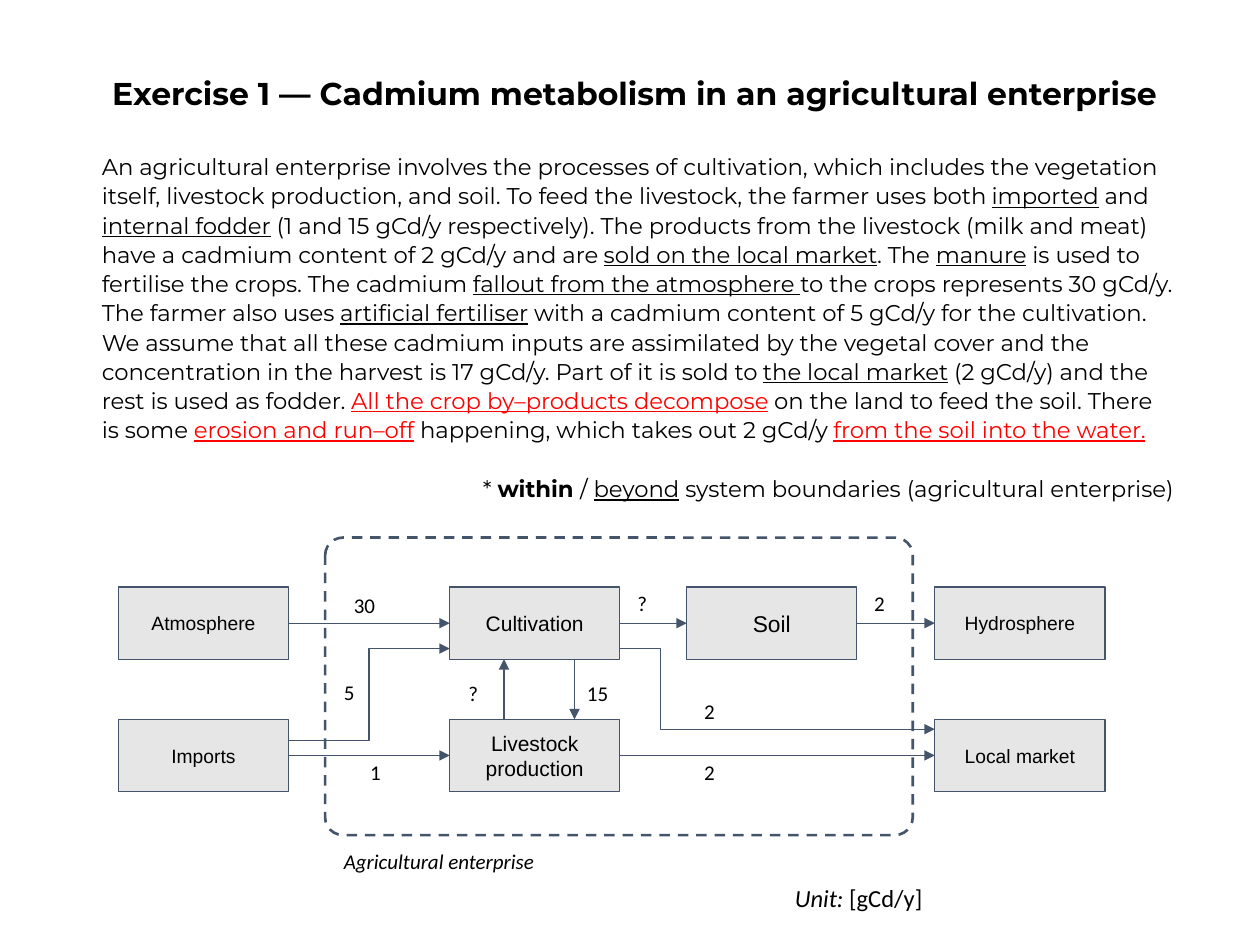
import lxml.etree
import pptx
import pptx.dml.color
import pptx.enum.dml
import pptx.enum.shapes
import pptx.enum.text
import pptx.oxml.ns
import pptx.util

Pt = pptx.util.Pt
qn = pptx.oxml.ns.qn
RGB = pptx.dml.color.RGBColor.from_string
SHAPES = pptx.enum.shapes.MSO_SHAPE
CONNECTORS = pptx.enum.shapes.MSO_CONNECTOR
ANCHORS = pptx.enum.text.MSO_ANCHOR
ALIGNS = pptx.enum.text.PP_ALIGN

THEME = {
    "ink": "000000", "highlight": "FF0000", "flow": "44546A", "process": "E7E6E6",
    "prose_font": "Montserrat", "process_font": "Arial", "label_font": "Calibri",
    "title": 18, "prose": 13, "label": 12, "unit": 14, "line": 0.75, "boundary": 1.5,
}
STYLES = {
    "plain": {},
    "beyond": {"underline": True},
    "alert": {"underline": True},
    "within": {"bold": True},
    "aside": {"italic": True},
}

TITLE = "Exercise 1 — Cadmium metabolism in an agricultural enterprise"
EXERCISE = [
    ("An agricultural enterprise involves the processes of cultivation, which includes the "
     "vegetation itself, livestock production, and soil. To feed the livestock, the farmer "
     "uses both ", "plain"),
    ("imported", "beyond"),
    (" and ", "plain"),
    ("internal fodder", "beyond"),
    (" (1 and 15 gCd/y respectively). The products from the livestock (milk and meat) have a "
     "cadmium content of 2 gCd/y and are ", "plain"),
    ("sold on the local market", "beyond"),
    (". The ", "plain"),
    ("manure", "beyond"),
    (" is used to fertilise the crops. The cadmium ", "plain"),
    ("fallout from the atmosphere ", "beyond"),
    ("to the crops represents 30 gCd/y. The farmer also uses ", "plain"),
    ("artificial fertiliser", "beyond"),
    (" with a cadmium content of 5 gCd/y for the cultivation. We assume that all these cadmium "
     "inputs are assimilated by the vegetal cover and the concentration in the harvest is "
     "17 gCd/y. Part of it is sold to ", "plain"),
    ("the local market", "beyond"),
    (" (2 gCd/y) and the rest is used as fodder. ", "plain"),
    ("All the crop by–products decompose", "alert"),
    (" on the land to feed the soil. There is some ", "plain"),
    ("erosion and run–off", "alert"),
    (" happening, which takes out 2 gCd/y ", "plain"),
    ("from the soil into the water.", "alert"),
]
LEGEND = [("* ", "plain"), ("within ", "within"), ("/ ", "plain"), ("beyond", "beyond"),
          (" system boundaries (agricultural enterprise)", "plain")]
BOUNDARY_NAME = [("Agricultural enterprise", "aside")]
UNIT = [("Unit:", "aside"), (" [gCd/y]", "plain")]

PROCESSES = {
    "Atmosphere": (0, 0, 11),
    "Imports": (0, 1, 11),
    "Cultivation": (1, 0, 12),
    "Livestock production": (1, 1, 12),
    "Soil": (2, 0, 13),
    "Hydrosphere": (3, 0, 11),
    "Local market": (3, 1, 11),
}
COLUMNS = (67.7, 257, 392.4, 534.2)
ROWS = (335.5, 411.1)
PROCESS_SIZE = (97.2, 41.2)
LABEL_SIZE = (31.7, 25.2)

# source, side, shift, target, side, shift, turn, amount, label left, label top
FLOWS = [
    ("Atmosphere", "right", 0, "Cultivation", "left", 0, None, "30", 195.1, 331.2),
    ("Imports", "right", -8.4, "Cultivation", "left", 14.5, 0.5, "5", 189.4, 380.9),
    ("Imports", "right", 0, "Livestock production", "left", 0, None, "1", 204.5, 427),
    ("Livestock production", "top", -17.6, "Cultivation", "bottom", -17.6, None,
     "?", 260.6, 381.6),
    ("Cultivation", "bottom", 22.7, "Livestock production", "top", 22.7, None,
     "15", 328.3, 381.6),
    ("Cultivation", "right", 0, "Soil", "left", 0, None, "?", 357.1, 330.5),
    ("Cultivation", "right", 14.5, "Local market", "left", -15, 0.13, "2", 395.3, 391.7),
    ("Livestock production", "right", 0, "Local market", "left", 0, None, "2", 395.3, 427),
    ("Soil", "right", 0, "Hydrosphere", "left", 0, None, "2", 492.5, 330.5),
]


def apply(target, values):
    for name, value in values.items():
        setattr(target, name, value)


def write(paragraph, runs, font, size):
    for text, style in runs:
        run = paragraph.add_run()
        run.text = text
        apply(run.font, {"name": font, "size": Pt(size), **STYLES[style]})
        run.font.color.rgb = RGB(THEME["highlight" if style == "alert" else "ink"])


def prepare(frame, vertical=7.2, anchor=ANCHORS.TOP):
    apply(frame, {
        "word_wrap": True, "auto_size": pptx.enum.text.MSO_AUTO_SIZE.NONE,
        "vertical_anchor": anchor, "margin_left": Pt(7.2), "margin_right": Pt(7.2),
        "margin_top": Pt(vertical), "margin_bottom": Pt(vertical),
    })


def add_label(slide, runs, box, size):
    frame = slide.shapes.add_textbox(*map(Pt, box)).text_frame
    prepare(frame)
    write(frame.paragraphs[0], runs, THEME["label_font"], size)


def outline(shape, width):
    shape.line.color.rgb = RGB(THEME["flow"])
    shape.line.width = Pt(width)


def add_title(slide):
    title = slide.shapes.title
    apply(title, {"left": Pt(56.9), "top": Pt(35.3), "width": Pt(615.6), "height": Pt(39.6)})
    prepare(title.text_frame)
    heading = title.text_frame.paragraphs[0]
    heading.alignment = ALIGNS.LEFT
    write(heading, [(TITLE, "within")], THEME["prose_font"], THEME["title"])


def add_exercise(slide):
    frame = slide.shapes.add_textbox(Pt(51.1), Pt(82.8), Pt(626.4), Pt(276.5)).text_frame
    prepare(frame, vertical=3.6)
    exercise, legend = frame.paragraphs[0], frame.add_paragraph()
    apply(exercise, {"line_spacing": 1.07})
    apply(legend, {"line_spacing": 1.07, "space_before": Pt(17), "alignment": ALIGNS.RIGHT})
    for paragraph, runs in ((exercise, EXERCISE), (legend, LEGEND)):
        write(paragraph, runs, THEME["prose_font"], THEME["prose"])


def add_boundary(slide):
    boundary = slide.shapes.add_shape(
        SHAPES.ROUNDED_RECTANGLE, Pt(185.8), Pt(307.2), Pt(335.8), Pt(170))
    boundary.adjustments[0] = 0.06
    boundary.shadow.inherit = False
    boundary.fill.background()
    outline(boundary, THEME["boundary"])
    boundary.line.dash_style = pptx.enum.dml.MSO_LINE.DASH


def add_process(slide, name):
    column, row, size = PROCESSES[name]
    process = slide.shapes.add_shape(
        SHAPES.RECTANGLE, Pt(COLUMNS[column]), Pt(ROWS[row]), *map(Pt, PROCESS_SIZE))
    process.shadow.inherit = False
    process.fill.solid()
    process.fill.fore_color.rgb = RGB(THEME["process"])
    outline(process, THEME["line"])
    prepare(process.text_frame, anchor=ANCHORS.MIDDLE)
    caption = process.text_frame.paragraphs[0]
    caption.alignment = ALIGNS.CENTER
    write(caption, [(name, "plain")], THEME["process_font"], size)


def port(name, side, shift):
    column, row, _ = PROCESSES[name]
    left, top = COLUMNS[column], ROWS[row]
    width, height = PROCESS_SIZE
    return {
        "left": (left, top + height / 2 + shift),
        "right": (left + width, top + height / 2 + shift),
        "top": (left + width / 2 + shift, top),
        "bottom": (left + width / 2 + shift, top + height),
    }[side]


def add_flow(slide, start, end, turn):
    kind = CONNECTORS.STRAIGHT if turn is None else CONNECTORS.ELBOW
    flow = slide.shapes.add_connector(kind, *map(Pt, start + end))
    outline(flow, THEME["line"])
    properties = flow.element.spPr
    lxml.etree.SubElement(properties.find(qn("a:ln")), qn("a:tailEnd"), type="triangle")
    lxml.etree.SubElement(properties, qn("a:effectLst"))
    if turn is not None:
        bends = properties.find(qn("a:prstGeom")).find(qn("a:avLst"))
        lxml.etree.SubElement(bends, qn("a:gd"), name="adj1", fmla=f"val {round(turn * 100000)}")


def main():
    deck = pptx.Presentation()
    apply(deck, {"slide_width": Pt(720), "slide_height": Pt(540)})
    slide = deck.slides.add_slide(deck.slide_layouts[5])
    add_title(slide)
    add_boundary(slide)
    add_exercise(slide)
    for name in PROCESSES:
        add_process(slide, name)
    for source, exit_side, exit_shift, target, entry_side, entry_shift, turn, amount, *spot in FLOWS:
        add_flow(slide, port(source, exit_side, exit_shift),
                 port(target, entry_side, entry_shift), turn)
        add_label(slide, [(amount, "plain")], (*spot, *LABEL_SIZE), THEME["label"])
    add_label(slide, BOUNDARY_NAME, (189.4, 477.4, 160.6, 24.5), THEME["label"])
    add_label(slide, UNIT, (447.1, 497.5, 89.3, 34.6), THEME["unit"])
    deck.save("out.pptx")


if __name__ == "__main__":
    main()
